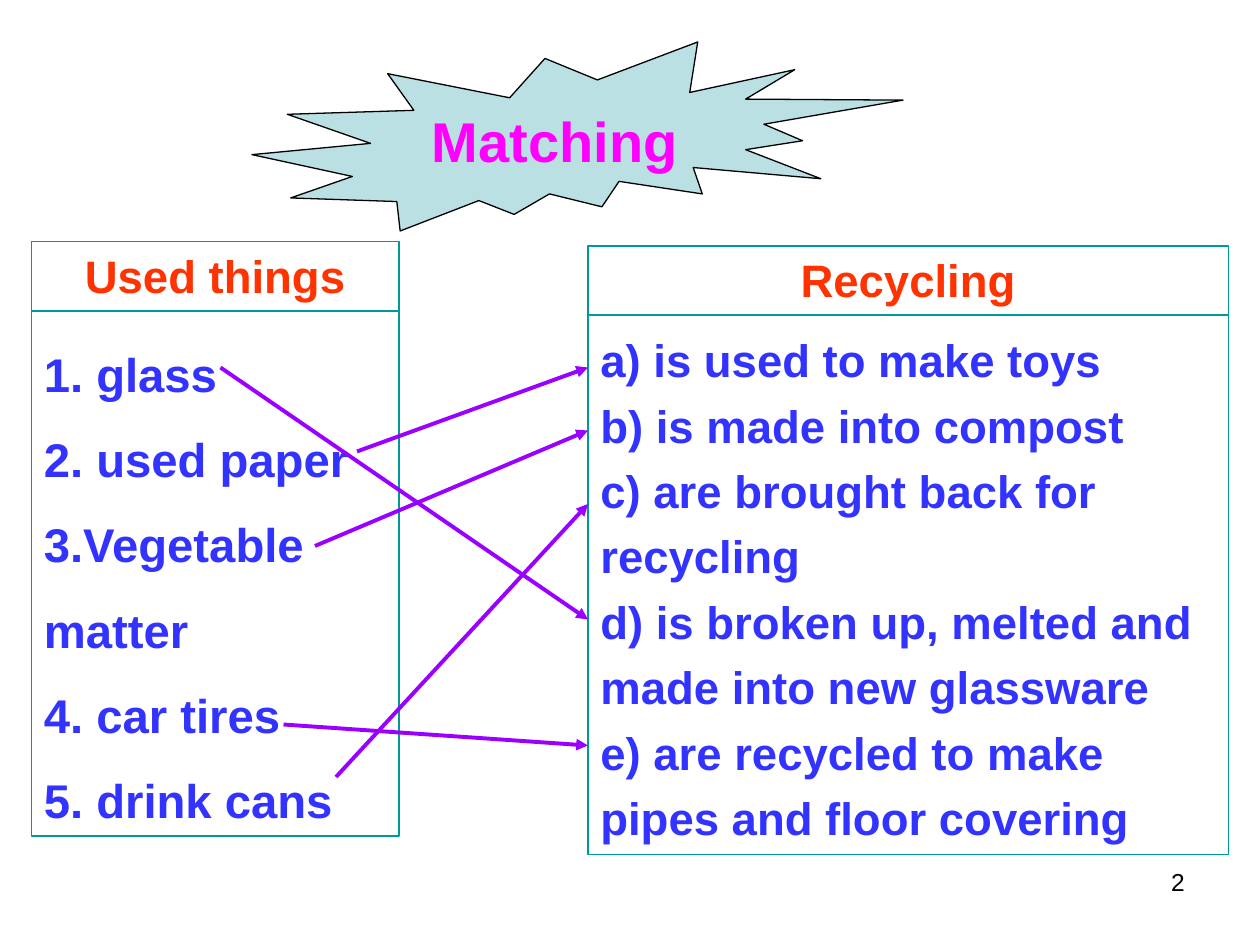
from dataclasses import dataclass
from lxml.etree import SubElement
from pptx import Presentation
from pptx.dml.color import RGBColor
from pptx.enum.shapes import MSO_CONNECTOR, MSO_SHAPE
from pptx.enum.text import MSO_ANCHOR as Anchor, PP_ALIGN as Align
from pptx.oxml.ns import qn
from pptx.util import Pt

PX = 7620  # EMU in one px, 120 px to the inch


@dataclass(frozen=True)
class Theme:
    font: str = "Arial"
    black: str = "000000"
    burst: str = "BBE0E3"
    title: str = "FF00FF"
    heading: str = "FF3300"
    body: str = "3333FF"
    border: str = "009999"
    arrow: str = "9900FF"
    title_size: int = 32
    heading_size: int = 26
    number_size: int = 14


THEME = Theme()

THINGS = ["1. glass", "2. used paper", "3.Vegetable matter",
          "4. car tires", "5. drink cans"]
USES = ["a) is used to make toys", "b) is made into compost",
        "c) are brought back for recycling",
        "d) is broken up, melted and made into new glassware",
        "e) are recycled to make pipes and floor covering"]

# Start of each arrow, and the height where it meets the right panel
MATCHES = [((210, 350), 590), ((340, 430), 350), ((300, 520), 410),
           ((270, 690), 710), ((320, 740), 480)]
PANEL_EDGE = 560


def emu(*lengths):
    return [length * PX for length in lengths]


def color(value):
    return RGBColor.from_string(value)


def write(shape, lines, size, ink, bold=True, align=Align.LEFT,
          anchor=Anchor.TOP, spacing=None, wrap=True):
    frame = shape.text_frame
    frame.word_wrap = wrap
    frame.vertical_anchor = anchor
    for index, line in enumerate(lines):
        para = frame.add_paragraph() if index else frame.paragraphs[0]
        para.alignment = align
        if spacing:
            para.line_spacing = spacing
        span = para.add_run()
        span.text = line
        span.font.name = THEME.font
        span.font.size = Pt(size)
        span.font.bold = bold
        span.font.color.rgb = color(ink)


def add_box(page, kind, box, border, width, fill=None):
    shape = page.shapes.add_shape(kind, *emu(*box))
    shape.shadow.inherit = False
    if fill:
        shape.fill.solid()
        shape.fill.fore_color.rgb = color(fill)
    else:
        shape.fill.background()
    shape.line.color.rgb = color(border)
    shape.line.width = Pt(width)
    return shape


def add_title(page, box, text):
    left, top, width, height = box
    burst = add_box(page, MSO_SHAPE.EXPLOSION2, box, THEME.black, 0.75, THEME.burst)
    # The title sits in the burst's inner area, in front of it
    title = page.shapes.title
    title.left, title.top, title.width, title.height = emu(
        left + round(width * 0.25), top + round(height * 0.3),
        round(width * 0.43), round(height * 0.44))
    burst._element.addnext(title._element)
    write(title, [text], THEME.title_size, THEME.title,
          align=Align.CENTER, anchor=Anchor.MIDDLE, wrap=False)


def add_panel(page, box, heading, lines, size, spacing):
    left, top, width, height = box
    head_height = 66
    head = add_box(page, MSO_SHAPE.RECTANGLE, (left, top, width, head_height),
                   THEME.border, 1)
    write(head, [heading], THEME.heading_size, THEME.heading, align=Align.CENTER)
    body = add_box(page, MSO_SHAPE.RECTANGLE,
                   (left, top + head_height, width, height - head_height),
                   THEME.border, 1)
    write(body, lines, size, THEME.body, spacing=spacing)


def add_arrow(page, start, end):
    arrow = page.shapes.add_connector(MSO_CONNECTOR.STRAIGHT, *emu(*start, *end))
    arrow.line.color.rgb = color(THEME.arrow)
    arrow.line.width = Pt(2.25)
    SubElement(arrow.line._get_or_add_ln(), qn("a:tailEnd"), type="triangle")
    SubElement(arrow._element.spPr, qn("a:effectLst"))


def add_page_number(page, box, number):
    label = page.shapes.add_textbox(*emu(*box))
    write(label, [number], THEME.number_size, THEME.black,
          bold=False, align=Align.RIGHT)


def main():
    deck = Presentation()
    deck.slide_width, deck.slide_height = emu(1200, 900)
    page = deck.slides.add_slide(deck.slide_layouts[5])
    add_page_number(page, (860, 820, 280, 62), "2")
    add_title(page, (240, 40, 620, 180), "Matching")
    add_panel(page, (30, 230, 350, 566), "Used things", THINGS, 27, 1.5)
    add_panel(page, (PANEL_EDGE, 234, 610, 580), "Recycling", USES, 26, 1.2)
    for start, end_height in MATCHES:
        add_arrow(page, start, (PANEL_EDGE, end_height))
    deck.save("out.pptx")


if __name__ == "__main__":
    main()
